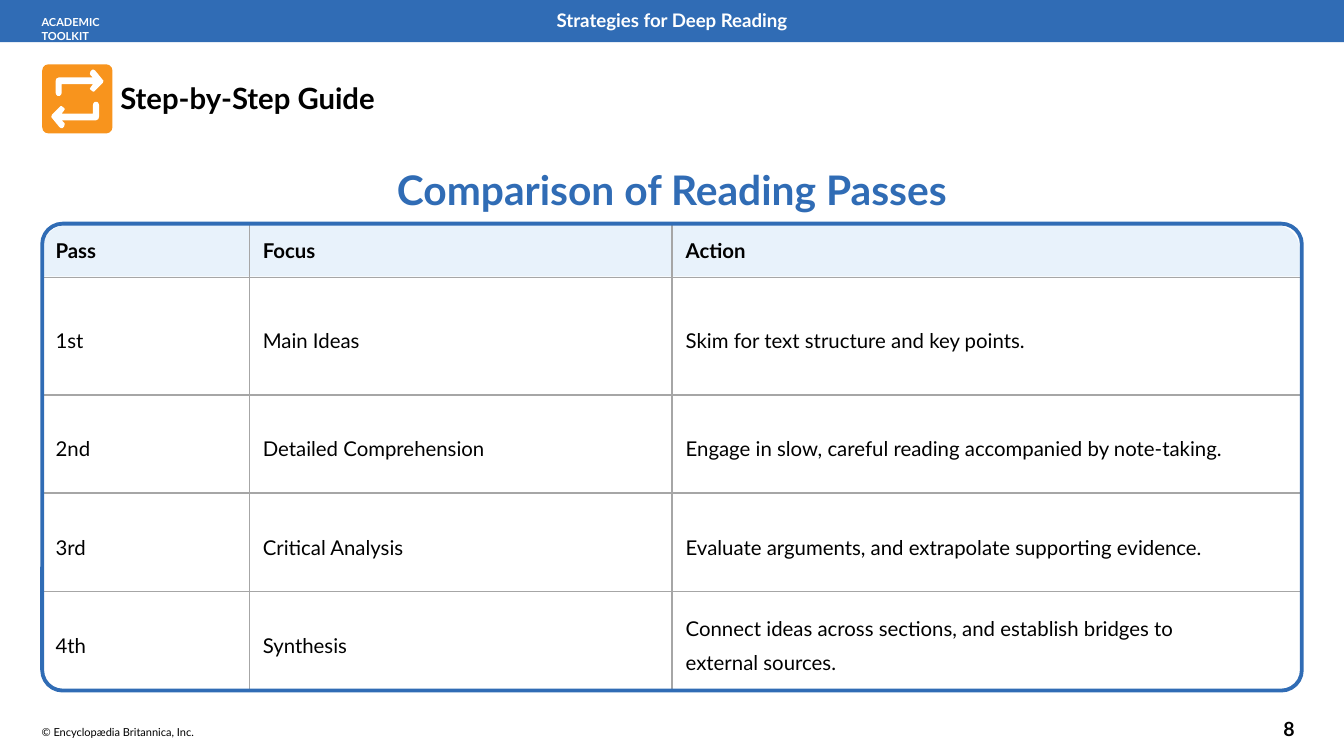
"""Build the reading passes comparison slide."""
from dataclasses import dataclass

from lxml import etree
from pptx import Presentation
from pptx.dml.color import RGBColor
from pptx.enum import shapes, text
from pptx.oxml import ns
from pptx.util import Pt

SHAPE = shapes.MSO_SHAPE
ALIGN = text.PP_ALIGN
WIDTH, HEIGHT = 1583.28, 890.64


@dataclass(frozen=True)
class Theme:
    font: str = "Lato"
    blue: str = "306CB5"
    pale: str = "E8F2FB"
    orange: str = "F8941D"
    grid: str = "A6A6A6"
    white: str = "FFFFFF"
    black: str = "000000"
    small: float = 13
    banner: float = 22
    number: float = 23
    body: float = 24
    section: float = 34.5
    title: float = 48


THEME = Theme()

ROWS = [
    ("Pass", "Focus", "Action"),
    ("1st", "Main Ideas", "Skim for text structure and key points."),
    ("2nd", "Detailed Comprehension",
     "Engage in slow, careful reading accompanied by note-taking."),
    ("3rd", "Critical Analysis",
     "Evaluate arguments, and extrapolate supporting evidence."),
    ("4th", "Synthesis",
     "Connect ideas across sections, and establish bridges to\vexternal sources."),
]
COLUMN_WIDTHS = [244.1, 498.2, 742.3]
ROW_HEIGHTS = [64.1, 138.2, 115.9, 115.9, 115.9]

ICON_CENTER = (91.1, 116.5)
ARROW = [
    (30.6, -21.6), (21.2, -33.1), (19.1, -34.6), (17.6, -34.6), (15.5, -32.4),
    (14.8, -29.5), (15.5, -28.1), (18.4, -25.2), (-22, -25.2), (-23.4, -24.5),
    (-24.8, -23.8), (-25.6, -20.9), (-25.6, -7.2), (-24.8, -5), (-23.4, -3.6),
    (-20.5, -3.6), (-19.1, -5), (-18.4, -7.2), (-18.4, -17.3), (18.4, -17.3),
    (16.2, -14.4), (14.8, -12.2), (15.5, -10.8), (18.4, -8.6), (19.8, -8.6),
    (29.9, -18.7), (30.6, -20.9),
]


def apply(target, values):
    for name, value in values.items():
        setattr(target, name, value)


def color(value):
    return RGBColor.from_string(value)


def style_spans(para, size, ink, bold):
    for span in para.runs:
        apply(span.font, {"name": THEME.font, "size": Pt(size), "bold": bold})
        span.font.color.rgb = color(ink)


def paint(shape, fill=None, line=None, weight=0):
    shape.shadow.inherit = False
    if fill:
        shape.fill.solid()
        shape.fill.fore_color.rgb = color(fill)
    else:
        shape.fill.background()
    if line:
        shape.line.color.rgb = color(line)
        shape.line.width = Pt(weight)
    else:
        shape.line.fill.background()


def add_block(page, kind, place, adjust=(), **look):
    block = page.shapes.add_shape(kind, *map(Pt, place))
    for index, value in enumerate(adjust):
        block.adjustments[index] = value
    paint(block, **look)


def add_label(page, words, place, size, ink=THEME.black, bold=True, align=ALIGN.LEFT):
    box = page.shapes.add_textbox(*map(Pt, place))
    apply(box.text_frame, {
        "word_wrap": True, "margin_left": 0, "margin_right": 0,
        "margin_top": Pt(1.3), "margin_bottom": 0,
    })
    para = box.text_frame.paragraphs[0]
    apply(para, {"text": words, "alignment": align})
    style_spans(para, size, ink, bold)


def add_cycle_icon(page):
    add_block(page, SHAPE.ROUNDED_RECTANGLE, (49.7, 75.8, 82.8, 81.4), [0.09],
              fill=THEME.orange)
    center_x, center_y = ICON_CENTER
    outlines = [
        [(Pt(center_x + sign * x), Pt(center_y + sign * y)) for x, y in ARROW]
        for sign in (1, -1)
    ]
    builder = page.shapes.build_freeform(*outlines[0][0])
    for outline in outlines:
        builder.move_to(*outline[0])
        builder.add_line_segments(outline[1:], close=True)
    paint(builder.convert_to_shape(), fill=THEME.white)


def add_border(cell, edge, visible):
    properties = cell._tc.get_or_add_tcPr()
    line = etree.SubElement(properties, ns.qn(f"a:ln{edge}"), w=str(Pt(2.25)))
    if visible:
        fill = etree.SubElement(line, ns.qn("a:solidFill"))
        etree.SubElement(fill, ns.qn("a:srgbClr"), val=THEME.grid)
    else:
        etree.SubElement(line, ns.qn("a:noFill"))


def add_passes_table(page):
    place = (49.7, 262.8, sum(COLUMN_WIDTHS), sum(ROW_HEIGHTS))
    table = page.shapes.add_table(len(ROWS), len(COLUMN_WIDTHS), *map(Pt, place)).table
    apply(table, {"first_row": False, "horz_banding": False})
    for column, width in zip(table.columns, COLUMN_WIDTHS):
        column.width = Pt(width)
    for row, height in zip(table.rows, ROW_HEIGHTS):
        row.height = Pt(height)
    last_row, last_column = len(ROWS) - 1, len(COLUMN_WIDTHS) - 1
    for r, entries in enumerate(ROWS):
        for c, words in enumerate(entries):
            cell = table.cell(r, c)
            apply(cell, {"margin_left": Pt(15.8),
                         "vertical_anchor": text.MSO_ANCHOR.MIDDLE})
            inner = {"L": c > 0, "R": c < last_column, "T": r > 0, "B": r < last_row}
            for edge, visible in inner.items():
                add_border(cell, edge, visible)
            cell.fill.background()
            para = cell.text_frame.paragraphs[0]
            apply(para, {"text": words, "line_spacing": 1.4 if r else 1.0})
            style_spans(para, THEME.body, THEME.black, r == 0)


def main():
    deck = Presentation()
    apply(deck, {"slide_width": Pt(WIDTH), "slide_height": Pt(HEIGHT)})
    page = deck.slides.add_slide(deck.slide_layouts[6])
    add_block(page, SHAPE.RECTANGLE, (0, 0, WIDTH, 49.7), fill=THEME.blue)
    add_block(page, SHAPE.ROUND_2_SAME_RECTANGLE, (49.7, 265, 1481.8, 60.5), [0.5, 0],
              fill=THEME.pale)
    add_passes_table(page)
    add_block(page, SHAPE.ROUNDED_RECTANGLE, (49.7, 263.5, 1483.9, 550.1), [0.044],
              line=THEME.blue, weight=4.5)
    add_cycle_icon(page)
    add_label(page, "ACADEMIC TOOLKIT", (49, 17.3, 110, 18), THEME.small, THEME.white)
    add_label(page, "Step-by-Step Guide", (141.8, 93.6, 303.8, 44), THEME.section)
    add_label(page, "8", (1512, 843.8, 26.6, 29.5), THEME.number)
    add_label(page, "© Encyclopædia Britannica, Inc.", (49, 853.9, 185, 18),
              THEME.small, bold=False)
    add_label(page, "Comparison of Reading Passes", (389.5, 193, 804.2, 59),
              THEME.title, THEME.blue, align=ALIGN.CENTER)
    add_label(page, "Strategies for Deep Reading", (455.8, 9.4, 671.8, 28),
              THEME.banner, THEME.white, align=ALIGN.CENTER)
    deck.save("out.pptx")


if __name__ == "__main__":
    main()
